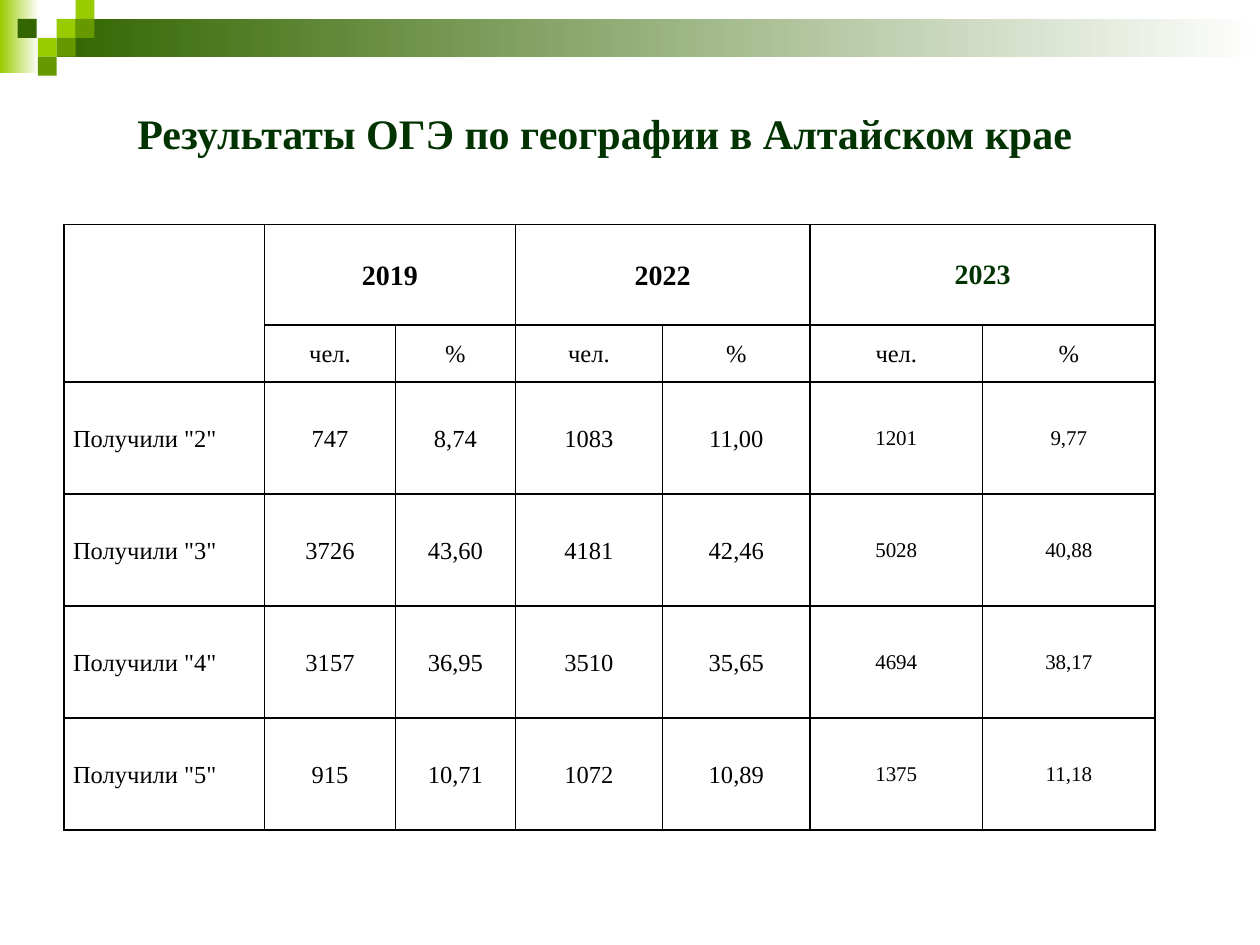
from typing import NamedTuple

from lxml import etree
from pptx import Presentation
from pptx import util as u
from pptx.dml.color import RGBColor
from pptx.enum import shapes, text
from pptx.oxml.ns import qn

FONT = "Times New Roman"
COLORS = {
    "lime": "99CC00",
    "green": "669900",
    "forest": "336600",
    "heading": "003300",
    "black": "000000",
    "white": "FFFFFF",
}


class Band(NamedTuple):
    left: float
    top: float
    width: float
    height: float
    color: str


class Square(NamedTuple):
    left: float
    top: float
    color: str


SIDE = 0.15
BANDS = [Band(0, 0, 0.31, 0.58, "lime"), Band(0.45, 0.15, 9.55, 0.3, "forest")]
SQUARES = [
    Square(0.45, 0.15, "lime"),
    Square(0.6, 0, "lime"),
    Square(0.6, 0.15, "green"),
    Square(0.3, 0.3, "lime"),
    Square(0.14, 0.15, "forest"),
    Square(0.45, 0.3, "green"),
    Square(0.3, 0.45, "green"),
]

COL_WIDTHS = [1.59, 1.04, 0.95, 1.17, 1.17, 1.37, 1.37]
ROW_HEIGHTS = [0.8, 0.45] + [0.89] * 4
YEARS = ["2019", "2022", "2023"]
RESULTS = [
    ['Получили "2"', "747", "8,74", "1083", "11,00", "1201", "9,77"],
    ['Получили "3"', "3726", "43,60", "4181", "42,46", "5028", "40,88"],
    ['Получили "4"', "3157", "36,95", "3510", "35,65", "4694", "38,17"],
    ['Получили "5"', "915", "10,71", "1072", "10,89", "1375", "11,18"],
]


def rgb(name: str) -> RGBColor:
    return RGBColor.from_string(COLORS[name])


def write(tf, words: str, size: float = 14, color: str = "black", bold: bool = False,
          align=text.PP_ALIGN.CENTER, spacing: float = 1.07) -> None:
    p = tf.paragraphs[0]
    p.alignment = align
    p.line_spacing = spacing
    r = p.add_run()
    r.text = words
    r.font.name = FONT
    r.font.size = u.Pt(size)
    r.font.bold = bold
    r.font.color.rgb = rgb(color)


def add_rect(s, left: float, top: float, width: float, height: float):
    sp = s.shapes.add_shape(shapes.MSO_SHAPE.RECTANGLE, u.Inches(left), u.Inches(top),
                            u.Inches(width), u.Inches(height))
    sp.shadow.inherit = False
    sp.line.fill.background()
    return sp


def draw_band(s, band: Band) -> None:
    fill = add_rect(s, band.left, band.top, band.width, band.height).fill
    fill.gradient()
    fill.gradient_angle = 0
    for stop, color in zip(fill.gradient_stops, (band.color, "white")):
        stop.color.rgb = rgb(color)


def draw_square(s, square: Square) -> None:
    fill = add_rect(s, square.left, square.top, SIDE, SIDE).fill
    fill.solid()
    fill.fore_color.rgb = rgb(square.color)


def format_cell(cell) -> None:
    cell.fill.solid()
    cell.fill.fore_color.rgb = rgb("white")
    cell.vertical_anchor = text.MSO_ANCHOR.MIDDLE
    cell.margin_left = cell.margin_right = u.Inches(0.07)
    cell.margin_top = cell.margin_bottom = 0
    tc_pr = cell._tc.get_or_add_tcPr()
    for i, side in enumerate(("a:lnL", "a:lnR", "a:lnT", "a:lnB")):
        ln = etree.Element(qn(side), w=str(u.Pt(1)))
        solid = etree.SubElement(ln, qn("a:solidFill"))
        etree.SubElement(solid, qn("a:srgbClr"), val=COLORS["black"])
        tc_pr.insert(i, ln)


def draw_table(s) -> None:
    frame = s.shapes.add_table(len(ROW_HEIGHTS), len(COL_WIDTHS), u.Inches(0.51), u.Inches(1.78),
                               u.Inches(sum(COL_WIDTHS)), u.Inches(sum(ROW_HEIGHTS)))
    table = frame.table
    table.first_row = table.horz_banding = False
    for column, width in zip(table.columns, COL_WIDTHS):
        column.width = u.Inches(width)
    for row, height in zip(table.rows, ROW_HEIGHTS):
        row.height = u.Inches(height)
    for cell in table.iter_cells():
        format_cell(cell)

    table.cell(0, 0).merge(table.cell(1, 0))
    for i, year in enumerate(YEARS):
        col = 1 + 2 * i
        latest = i == len(YEARS) - 1
        table.cell(0, col).merge(table.cell(0, col + 1))
        write(table.cell(0, col).text_frame, year, size=16, bold=True,
              color="heading" if latest else "black", spacing=1.0 if latest else 1.07)
        for j, unit in enumerate(("чел.", "%")):
            write(table.cell(1, col + j).text_frame, unit)

    for i, result in enumerate(RESULTS, start=2):
        for j, value in enumerate(result):
            write(table.cell(i, j).text_frame, value, size=12 if j >= 5 else 14,
                  align=text.PP_ALIGN.CENTER if j else text.PP_ALIGN.LEFT)


def draw_title(s) -> None:
    title = s.shapes.title
    title.left, title.top = u.Inches(0.5), u.Inches(0.5)
    title.width, title.height = u.Inches(9), u.Inches(1.05)
    tf = title.text_frame
    tf.word_wrap = True
    tf.vertical_anchor = text.MSO_ANCHOR.MIDDLE
    write(tf, "Результаты ОГЭ по географии в Алтайском крае", size=24, color="heading",
          bold=True, align=text.PP_ALIGN.LEFT, spacing=1.15)
    p_pr = tf.paragraphs[0]._p.get_or_add_pPr()
    p_pr.set("marL", "0")
    p_pr.set("indent", str(u.Inches(0.49)))


def main() -> None:
    prs = Presentation()
    prs.slide_width, prs.slide_height = u.Inches(10), u.Inches(7.5)
    s = prs.slides.add_slide(prs.slide_layouts[5])
    for band in BANDS:
        draw_band(s, band)
    for square in SQUARES:
        draw_square(s, square)
    draw_title(s)
    draw_table(s)
    prs.save("out.pptx")


if __name__ == "__main__":
    main()
